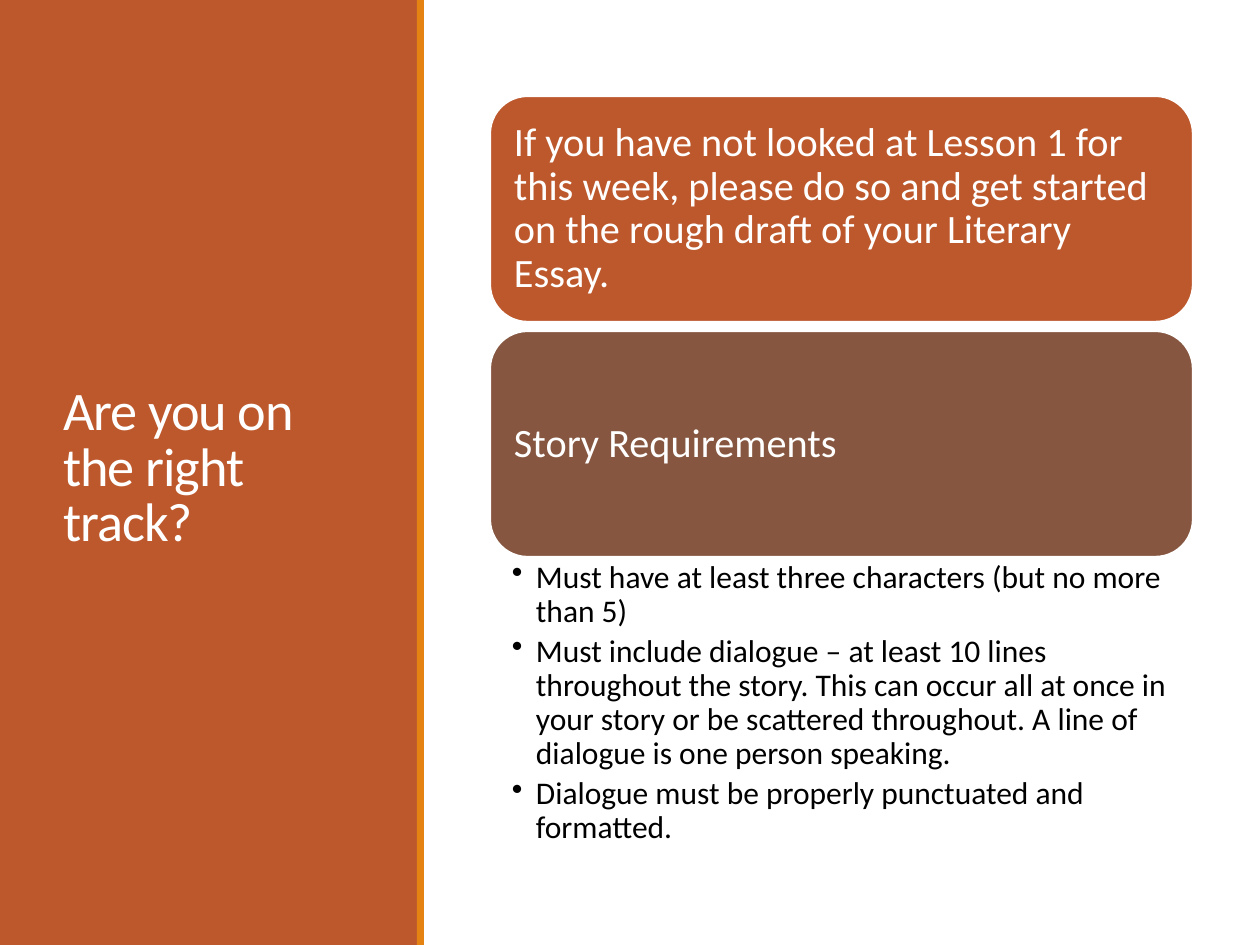
from lxml import etree
from pptx import Presentation
from pptx.dml.color import RGBColor
from pptx.enum.shapes import MSO_SHAPE
from pptx.enum.text import MSO_ANCHOR, PP_ALIGN
from pptx.oxml.ns import qn
from pptx.util import Emu, Pt

RECTANGLE = MSO_SHAPE.RECTANGLE
ROUNDED = MSO_SHAPE.ROUNDED_RECTANGLE
MIDDLE = MSO_ANCHOR.MIDDLE
TOP = MSO_ANCHOR.TOP
LEFT = PP_ALIGN.LEFT

SCALE = 914400 / 126
SLIDE_WIDTH, SLIDE_HEIGHT = 1260, 945
FONT = "Calibri"
RUST, ORANGE, BROWN = "BD582C", "E48312", "865640"
WHITE, BLACK = "FFFFFF", "000000"

TITLE = "Are you on the right track?"
CARDS = [
    ("If you have not looked at Lesson 1 for this week, please do so and get "
     "started on the rough draft of your Literary Essay.", RUST),
    ("Story Requirements", BROWN),
]
REQUIREMENTS = [
    "Must have at least three characters (but no more than 5)",
    "Must include dialogue – at least 10 lines throughout the story. This can "
    "occur all at once in your story or be scattered throughout. A line of "
    "dialogue is one person speaking.",
    "Dialogue must be properly punctuated and formatted.",
]


def px(length):
    return Emu(round(length * SCALE))


def color(value):
    return RGBColor.from_string(value)


def add_box(slide, kind, box, fill, line=None):
    shape = slide.shapes.add_shape(kind, *map(px, box))
    shape.shadow.inherit = False
    shape.fill.solid()
    shape.fill.fore_color.rgb = color(fill)
    if line:
        shape.line.color.rgb = color(line)
        shape.line.width = Pt(1.25)
    else:
        shape.line.fill.background()
    return shape


def add_bullet(paragraph, indent):
    properties = paragraph._p.get_or_add_pPr()
    properties.set("marL", str(px(indent)))
    properties.set("indent", str(-px(indent)))
    etree.SubElement(properties, qn("a:buChar")).set("char", "•")


def write_text(shape, texts, size, fill, anchor=MIDDLE, margins=(13, 13),
               line_spacing=0.9, space_after=0, character_spacing=0, bullet_indent=0):
    frame = shape.text_frame
    frame.word_wrap = True
    frame.vertical_anchor = anchor
    frame.margin_left = frame.margin_right = px(margins[0])
    frame.margin_top = frame.margin_bottom = px(margins[1])
    for index, text in enumerate(texts):
        paragraph = frame.add_paragraph() if index else frame.paragraphs[0]
        paragraph.alignment = LEFT
        paragraph.line_spacing = line_spacing
        paragraph.space_after = Pt(space_after)
        if bullet_indent:
            add_bullet(paragraph, bullet_indent)
        run = paragraph.add_run()
        run.text = text
        run.font.name = FONT
        run.font.size = Pt(size)
        run.font.color.rgb = color(fill)
        if character_spacing:
            run.font._element.set("spc", str(round(character_spacing * 100)))


def add_title_panel(slide, left, top, width, height):
    stripe = 7
    add_box(slide, RECTANGLE, (left, top, width - stripe, height), RUST)
    add_box(slide, RECTANGLE, (left + width - stripe, top, stripe, height), ORANGE)
    title_box = (left + 50, top + 72, width - 105, height - 150)
    title = slide.shapes.add_textbox(*map(px, title_box))
    write_text(title, [TITLE], 31, WHITE, margins=(13, 6), line_spacing=0.85,
               character_spacing=-0.5)


def add_requirements(slide, left, top, width, height):
    card_height, gap = 226, 9
    for index, (text, fill) in enumerate(CARDS):
        card_top = top + index * (card_height + gap)
        card = add_box(slide, ROUNDED, (left, card_top, width, card_height), fill, WHITE)
        write_text(card, [text], 23, WHITE)
    list_top = len(CARDS) * (card_height + gap) - gap
    list_box = (left, top + list_top, width, height - list_top)
    requirements = slide.shapes.add_textbox(*map(px, list_box))
    write_text(requirements, REQUIREMENTS, 18, BLACK, anchor=TOP, margins=(22, 4),
               space_after=3.6, bullet_indent=24)


def main():
    presentation = Presentation()
    presentation.slide_width = px(SLIDE_WIDTH)
    presentation.slide_height = px(SLIDE_HEIGHT)
    slide = presentation.slides.add_slide(presentation.slide_layouts[6])
    slide.background.fill.solid()
    slide.background.fill.fore_color.rgb = color(WHITE)
    add_title_panel(slide, 0, 0, 424, SLIDE_HEIGHT)
    add_requirements(slide, 490, 96, 703, 763)
    presentation.save("out.pptx")


if __name__ == "__main__":
    main()
